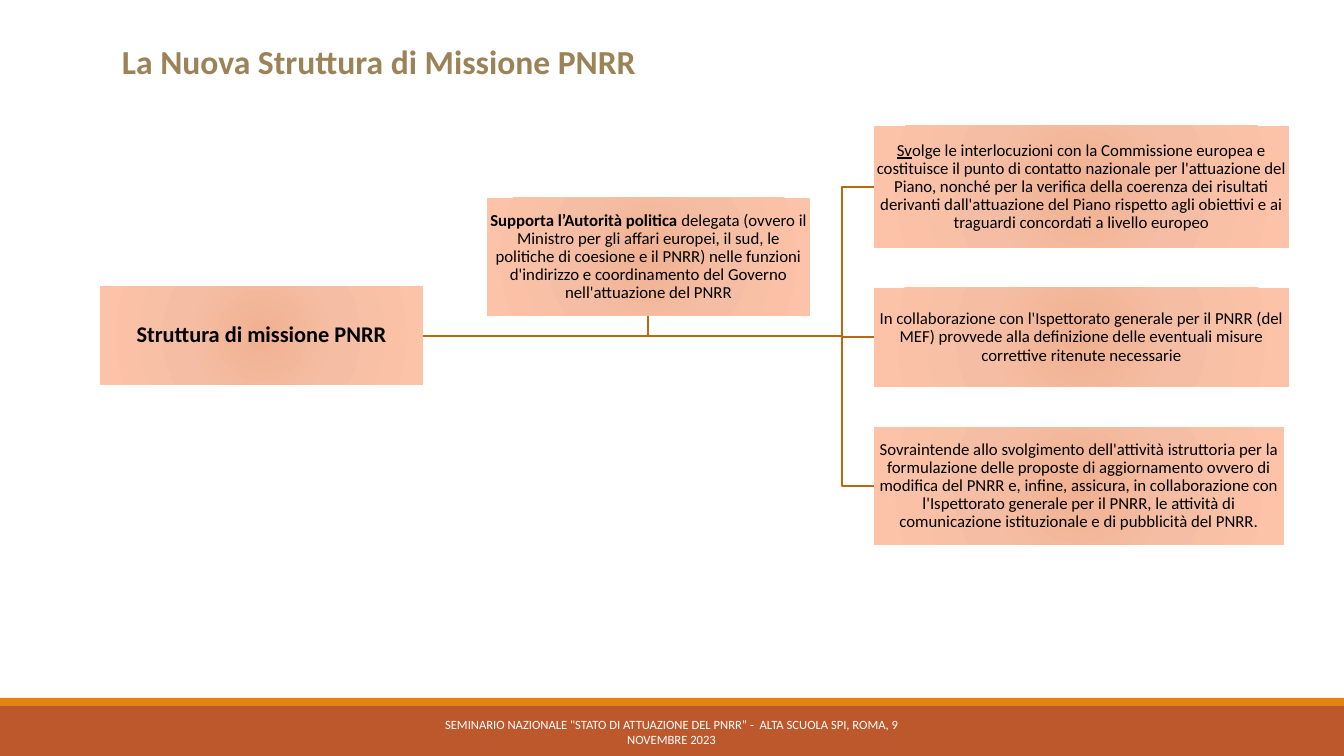
from lxml.etree import SubElement
from pptx import Presentation
from pptx.dml.color import RGBColor
from pptx.enum.shapes import MSO_SHAPE
from pptx.enum.text import MSO_ANCHOR, PP_ALIGN
from pptx.oxml.ns import qn
from pptx.util import Pt

PX = 914400 / 100.8
FONT = "Calibri"
BLACK = "000000"
STOPS = [(0, "F0B191"), (45, "F5BEA4"), (100, "FDC3A8")]

# Boxes: left, top, width, height, text size, runs (text, style)
ROOT = (100, 286, 323, 99, 16, [("Struttura di missione PNRR", "b")])
AIDE = (487, 198, 323, 118, 12, [
    ("Supporta l’Autorità politica ", "b"),
    ("delegata (ovvero il Ministro per gli affari europei, il sud, le "
     "politiche di coesione e il PNRR) nelle funzioni d'indirizzo e "
     "coordinamento del Governo nell'attuazione del PNRR", "")])
TASKS = [
    (874, 126, 415, 122, 12, [
        ("Sv", "u"),
        ("olge le interlocuzioni con la Commissione europea e costituisce "
         "il punto di contatto nazionale per l'attuazione del Piano, nonché "
         "per la verifica della coerenza dei risultati derivanti "
         "dall'attuazione del Piano rispetto agli obiettivi e ai traguardi "
         "concordati a livello europeo", "")]),
    (874, 288, 415, 99, 12, [
        ("In collaborazione con l'Ispettorato generale per il PNRR (del MEF) "
         "provvede alla definizione delle eventuali misure correttive "
         "ritenute necessarie", "")]),
    (874, 427, 410, 118, 12, [
        ("Sovraintende allo svolgimento dell'attività istruttoria per la "
         "formulazione delle proposte di aggiornamento ovvero di modifica "
         "del PNRR e, infine, assicura, in collaborazione con l'Ispettorato "
         "generale per il PNRR, le attività di comunicazione istituzionale "
         "e di pubblicità del PNRR.", "")]),
]


def px(num):
    return round(num * PX)


def tint(code):
    return RGBColor.from_string(code)


def write(shape, runs, size, hue, anchor):
    frame = shape.text_frame
    frame.word_wrap = True
    frame.vertical_anchor = anchor
    para = frame.paragraphs[0]
    para.alignment = PP_ALIGN.CENTER
    for text, style in runs:
        run = para.add_run()
        run.text = text
        font = run.font
        font.name, font.size = FONT, Pt(size)
        font.bold, font.underline = style == "b", style == "u"
        font.color.rgb = tint(hue)
    return frame


def rect(shapes, left, top, width, height):
    shape = shapes.add_shape(MSO_SHAPE.RECTANGLE, px(left), px(top),
                             px(width), px(height))
    shape.shadow.inherit = False
    shape.line.fill.background()
    return shape


def band(shapes, top, height, hue):
    shape = rect(shapes, 0, top, 1344, height)
    shape.fill.solid()
    shape.fill.fore_color.rgb = tint(hue)


def glow(shape):
    """Fill a shape with a radial blend."""
    shape.fill.gradient()
    grad = shape.fill._xPr.find(qn("a:gradFill"))
    for child in list(grad):
        grad.remove(child)
    stops = SubElement(grad, qn("a:gsLst"))
    for pos, hue in STOPS:
        stop = SubElement(stops, qn("a:gs"), pos=str(pos * 1000))
        SubElement(stop, qn("a:srgbClr"), val=hue)
    ring = SubElement(grad, qn("a:path"), path="circle")
    SubElement(ring, qn("a:fillToRect"), {side: "100000" for side in "ltrb"})


def box(shapes, left, top, width, height, size, runs):
    shape = rect(shapes, left, top, width, height)
    glow(shape)
    frame = write(shape, runs, size, BLACK, MSO_ANCHOR.MIDDLE)
    frame.paragraphs[0].line_spacing = 0.9
    frame.margin_left = frame.margin_right = px(1)
    frame.margin_top = frame.margin_bottom = px(1)


def label(shapes, left, top, width, height, text, size, hue, style, anchor):
    shape = shapes.add_textbox(px(left), px(top), px(width), px(height))
    write(shape, [(text, style)], size, hue, anchor)


def link(shapes, start, *points):
    path = shapes.build_freeform(*start, scale=PX)
    path.add_line_segments(points, close=False)
    shape = path.convert_to_shape()
    shape.shadow.inherit = False
    shape.fill.background()
    shape.line.color.rgb = tint("B7690E")
    shape.line.width = Pt(1.25)


def main():
    deck = Presentation()
    deck.slide_width, deck.slide_height = px(1344), px(756)
    shapes = deck.slides.add_slide(deck.slide_layouts[6]).shapes

    # Footer bands
    band(shapes, 706, 50, "BD582C")
    band(shapes, 698, 8, "E48312")

    # Links from the root to each box
    left, top, width, height = ROOT[:4]
    start = (left + width, top + height // 2 + 1)
    mid, base = 842, start[1]
    aide_x = AIDE[0] + AIDE[2] // 2
    link(shapes, start, (aide_x, base), (aide_x, AIDE[1] + AIDE[3]))
    for left, top, width, height, *rest in TASKS:
        goal = top + height // 2
        link(shapes, start, (mid, base), (mid, goal), (left, goal))

    # Boxes
    for item in [ROOT, *TASKS, AIDE]:
        box(shapes, *item)

    # Title and footer text
    label(shapes, 112, 36, 534, 92, "La Nuova Struttura di Missione PNRR",
          24, "9B8357", "b", MSO_ANCHOR.TOP)
    label(shapes, 406, 712, 531, 40,
          "SEMINARIO NAZIONALE \"STATO DI ATTUAZIONE DEL PNRR” -  ALTA SCUOLA "
          "SPI, ROMA, 9 NOVEMBRE 2023", 9, "FFFFFF", "", MSO_ANCHOR.MIDDLE)

    deck.save("out.pptx")


if __name__ == "__main__":
    main()
